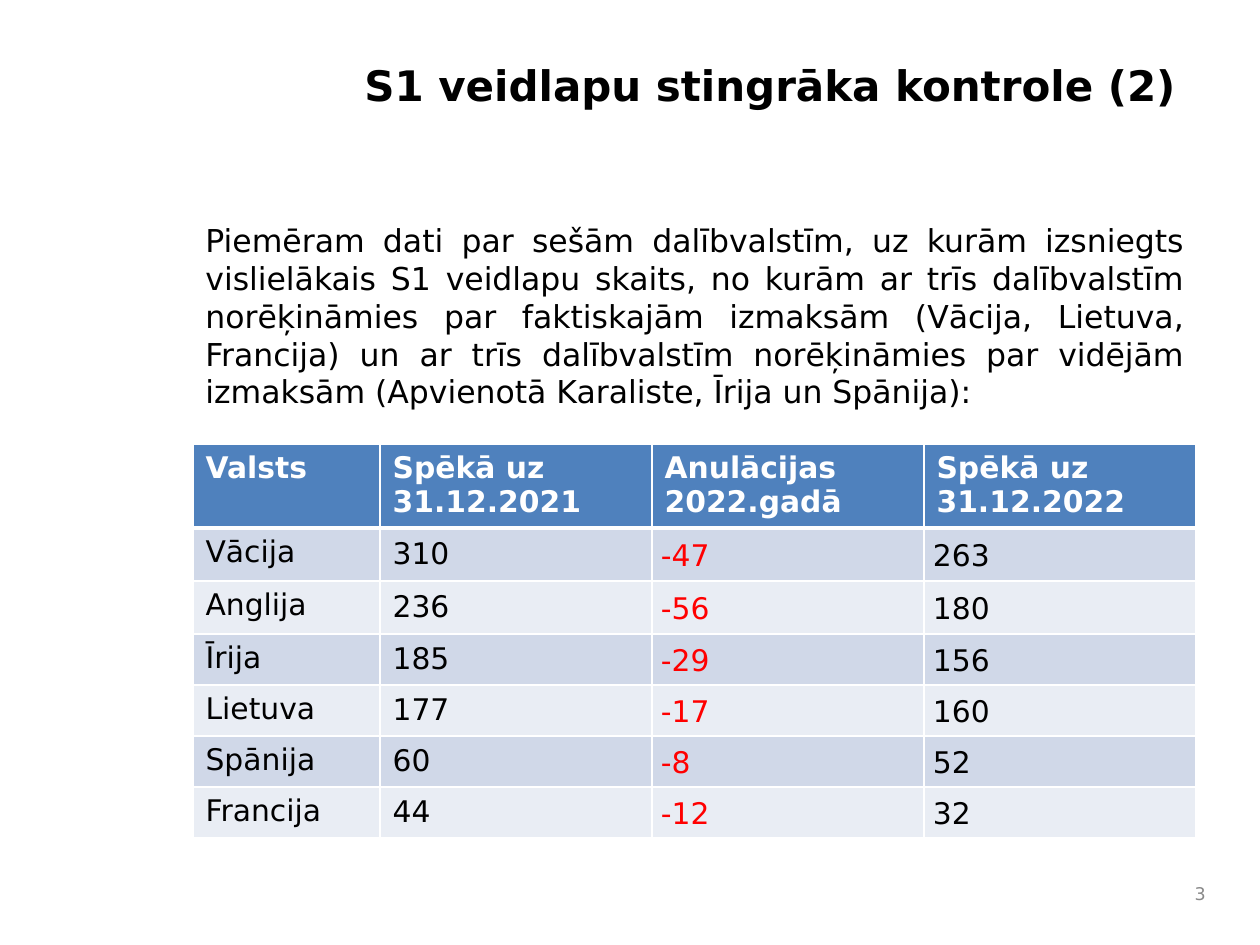
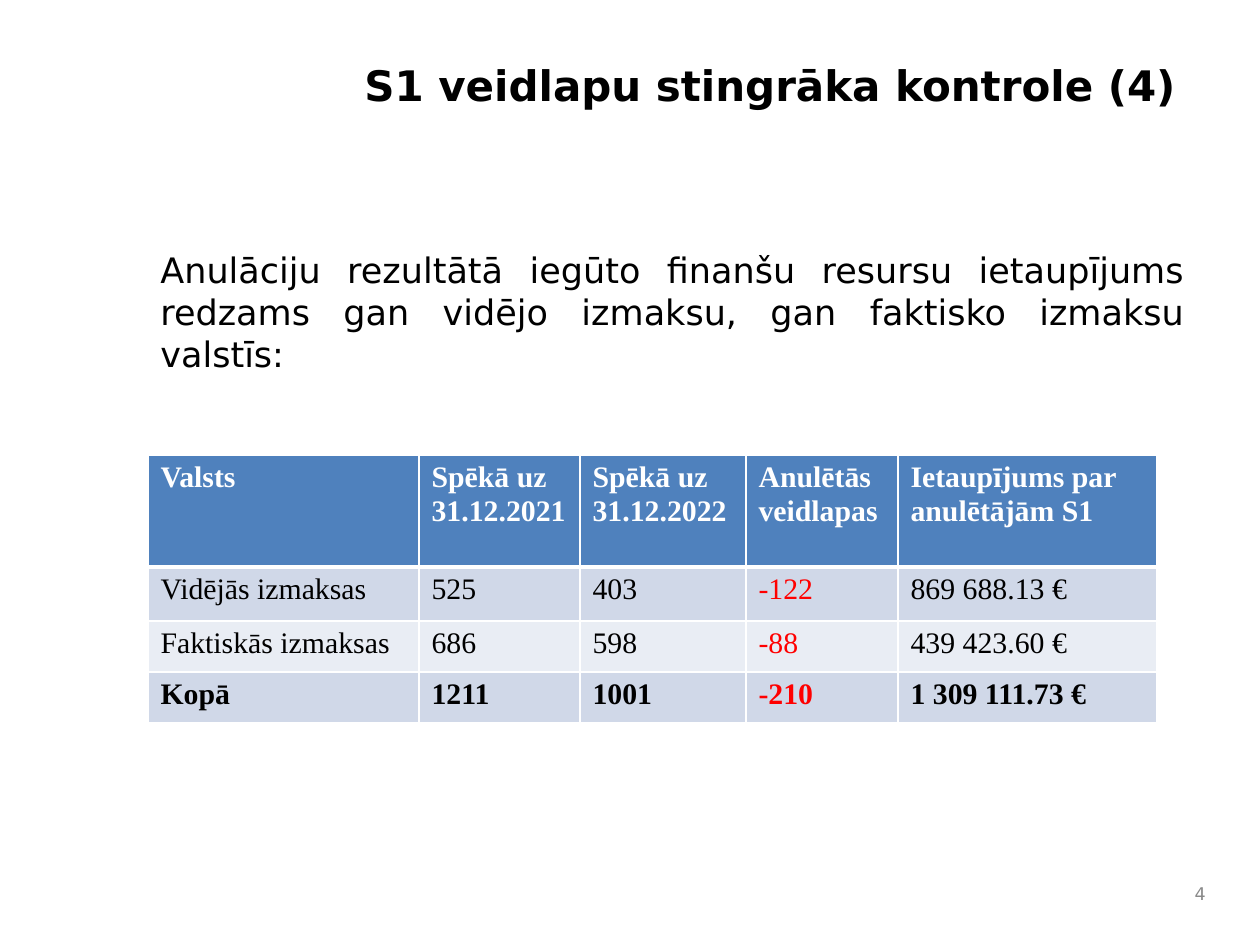
from dataclasses import dataclass, replace
from typing import Any

from lxml import etree
from pptx import Presentation
from pptx import util as u
from pptx.dml.color import RGBColor
from pptx.enum import text as t
from pptx.oxml import ns

# Shared scale, colours and fonts
EMU_PER_PX = 914400 / 126
BLACK = RGBColor(0x00, 0x00, 0x00)
WHITE = RGBColor(0xFF, 0xFF, 0xFF)
RED = RGBColor(0xFF, 0x00, 0x00)
GREY = RGBColor(0x89, 0x89, 0x89)
HEADER_BLUE = RGBColor(0x4F, 0x81, 0xBD)
BANDS = (RGBColor(0xD0, 0xD8, 0xE8), RGBColor(0xE9, 0xED, 0xF4))
SANS = "DejaVu Sans"
SERIF = "Times New Roman"
TOP, MIDDLE = t.MSO_ANCHOR.TOP, t.MSO_ANCHOR.MIDDLE


@dataclass(frozen=True)
class Box:
    left: int
    top: int
    width: int
    height: int


@dataclass(frozen=True)
class TextStyle:
    size: int
    font: str = SANS
    color: RGBColor = BLACK
    bold: bool = False
    align: Any = t.PP_ALIGN.LEFT
    anchor: Any = TOP


@dataclass(frozen=True)
class Column:
    width: int
    heading: str
    color: RGBColor = BLACK
    anchor: Any = TOP
    tight: bool = False


@dataclass(frozen=True)
class DataTable:
    left: int
    top: int
    font: str
    columns: list[Column]
    row_heights: list[int]
    rows: list[list[str]]
    has_total: bool = False


@dataclass(frozen=True)
class SlideContent:
    title: str
    intro: str
    intro_box: Box
    intro_size: int
    number: str
    table: DataTable


TITLE_BOX = Box(352, 53, 845, 142)
NUMBER_BOX = Box(1176, 872, 42, 42)
TITLE_STYLE = TextStyle(24, bold=True)
NUMBER_STYLE = TextStyle(10, color=GREY, align=t.PP_ALIGN.RIGHT, anchor=MIDDLE)
TIGHT_MARGINS = {"margin_left": 9, "margin_right": 9, "margin_top": 0, "margin_bottom": 0}
TIGHT_SPACING = {"line_spacing": 1.07, "space_after": u.Pt(6)}


def px(length: int) -> int:
    return round(length * EMU_PER_PX)


def set_all(target: Any, values: dict[str, Any]) -> None:
    for name, value in values.items():
        setattr(target, name, value)


def write(frame: Any, content: str, style: TextStyle) -> None:
    frame.text = content
    for paragraph in frame.paragraphs:
        paragraph.alignment = style.align
        for run in paragraph.runs:
            set_all(run.font, {"size": u.Pt(style.size), "name": style.font, "bold": style.bold})
            run.font.color.rgb = style.color


def add_text(slide: Any, box: Box, content: str, style: TextStyle) -> None:
    frame = slide.shapes.add_textbox(*map(px, (box.left, box.top, box.width, box.height))).text_frame
    set_all(frame, {"word_wrap": True, "vertical_anchor": style.anchor})
    write(frame, content, style)


def add_borders(cell: Any, top: int, bottom: int) -> None:
    """White rules; their elements must stand before the cell fill."""
    properties = cell._tc.get_or_add_tcPr()
    for index, (side, points) in enumerate({"L": 1, "R": 1, "T": top, "B": bottom}.items()):
        line = etree.Element(ns.qn(f"a:ln{side}"), w=str(u.Pt(points)))
        fill = etree.SubElement(line, ns.qn("a:solidFill"))
        etree.SubElement(fill, ns.qn("a:srgbClr"), val=str(WHITE))
        properties.insert(index, line)


def add_data_table(slide: Any, data: DataTable) -> None:
    lines = [[column.heading for column in data.columns], *data.rows]
    width = sum(column.width for column in data.columns)
    table = slide.shapes.add_table(
        len(lines), len(data.columns), px(data.left), px(data.top),
        px(width), px(sum(data.row_heights))).table
    table.horz_banding = False
    for grid_column, column in zip(table.columns, data.columns):
        grid_column.width = px(column.width)
    for grid_row, height in zip(table.rows, data.row_heights):
        grid_row.height = px(height)

    header_style = TextStyle(17, data.font, WHITE, bold=True)
    for r, line in enumerate(lines):
        is_header = r == 0
        is_total = data.has_total and r == len(lines) - 1
        for c, (content, column) in enumerate(zip(line, data.columns)):
            cell = table.cell(r, c)
            cell.fill.solid()
            cell.fill.fore_color.rgb = HEADER_BLUE if is_header else BANDS[(r - 1) % 2]
            add_borders(cell, top=3 if r == 1 else 1, bottom=3 if is_header else 1)
            if is_header:
                write(cell.text_frame, content, header_style)
                continue
            write(cell.text_frame, content,
                  replace(header_style, color=column.color, bold=is_total))
            cell.vertical_anchor = column.anchor
            if column.tight:
                set_all(cell, {name: px(margin) for name, margin in TIGHT_MARGINS.items()})
                set_all(cell.text_frame.paragraphs[0], TIGHT_SPACING)


def add_slide(deck: Any, content: SlideContent) -> None:
    slide = deck.slides.add_slide(deck.slide_layouts[6])
    add_text(slide, TITLE_BOX, content.title, TITLE_STYLE)
    add_text(slide, content.intro_box, content.intro,
             TextStyle(content.intro_size, align=t.PP_ALIGN.JUSTIFY))
    add_text(slide, NUMBER_BOX, content.number, NUMBER_STYLE)
    add_data_table(slide, content.table)


# Forms by country
COUNTRIES = DataTable(
    left=193, top=444, font=SANS,
    columns=[
        Column(187, "Valsts"),
        Column(272, "Spēkā uz 31.12.2021", anchor=MIDDLE),
        Column(272, "Anulācijas 2022.gadā", RED, MIDDLE, tight=True),
        Column(272, "Spēkā uz 31.12.2022", anchor=MIDDLE, tight=True),
    ],
    row_heights=[84, 53, 53, 51, 51, 51, 51],
    rows=[
        ["Vācija", "310", "-47", "263"],
        ["Anglija", "236", "-56", "180"],
        ["Īrija", "185", "-29", "156"],
        ["Lietuva", "177", "-17", "160"],
        ["Spānija", "60", "-8", "52"],
        ["Francija", "44", "-12", "32"],
    ],
)

# Savings by kind of cost
SAVINGS = DataTable(
    left=148, top=455, font=SERIF,
    columns=[
        Column(271, "Valsts"),
        Column(161, "Spēkā uz\n31.12.2021"),
        Column(166, "Spēkā uz\n31.12.2022"),
        Column(152, "Anulētās veidlapas", RED),
        Column(259, "Ietaupījums par anulētājām S1"),
    ],
    row_heights=[112, 54, 51, 51],
    rows=[
        ["Vidējās izmaksas", "525", "403", "-122", "869 688.13 €"],
        ["Faktiskās izmaksas", "686", "598", "-88", "439 423.60 €"],
        ["Kopā", "1211", "1001", "-210", "1 309 111.73 €"],
    ],
    has_total=True,
)

SLIDES = [
    SlideContent(
        "S1 veidlapu stingrāka kontrole (2)",
        "Piemēram dati par sešām dalībvalstīm, uz kurām izsniegts vislielākais S1 veidlapu "
        "skaits, no kurām ar trīs dalībvalstīm norēķināmies par faktiskajām izmaksām "
        "(Vācija, Lietuva, Francija) un ar trīs dalībvalstīm norēķināmies par vidējām "
        "izmaksām (Apvienotā Karaliste, Īrija un Spānija):",
        Box(193, 215, 1004, 210), 18, "3", COUNTRIES),
    SlideContent(
        "S1 veidlapu stingrāka kontrole (4)",
        "Anulāciju rezultātā iegūto finanšu resursu ietaupījums redzams gan vidējo izmaksu, "
        "gan faktisko izmaksu valstīs:",
        Box(148, 242, 1049, 189), 20, "4", SAVINGS),
]


def main() -> None:
    deck = Presentation()
    set_all(deck, {"slide_width": px(1260), "slide_height": px(945)})
    for content in SLIDES:
        add_slide(deck, content)
    deck.save("out.pptx")


if __name__ == "__main__":
    main()
